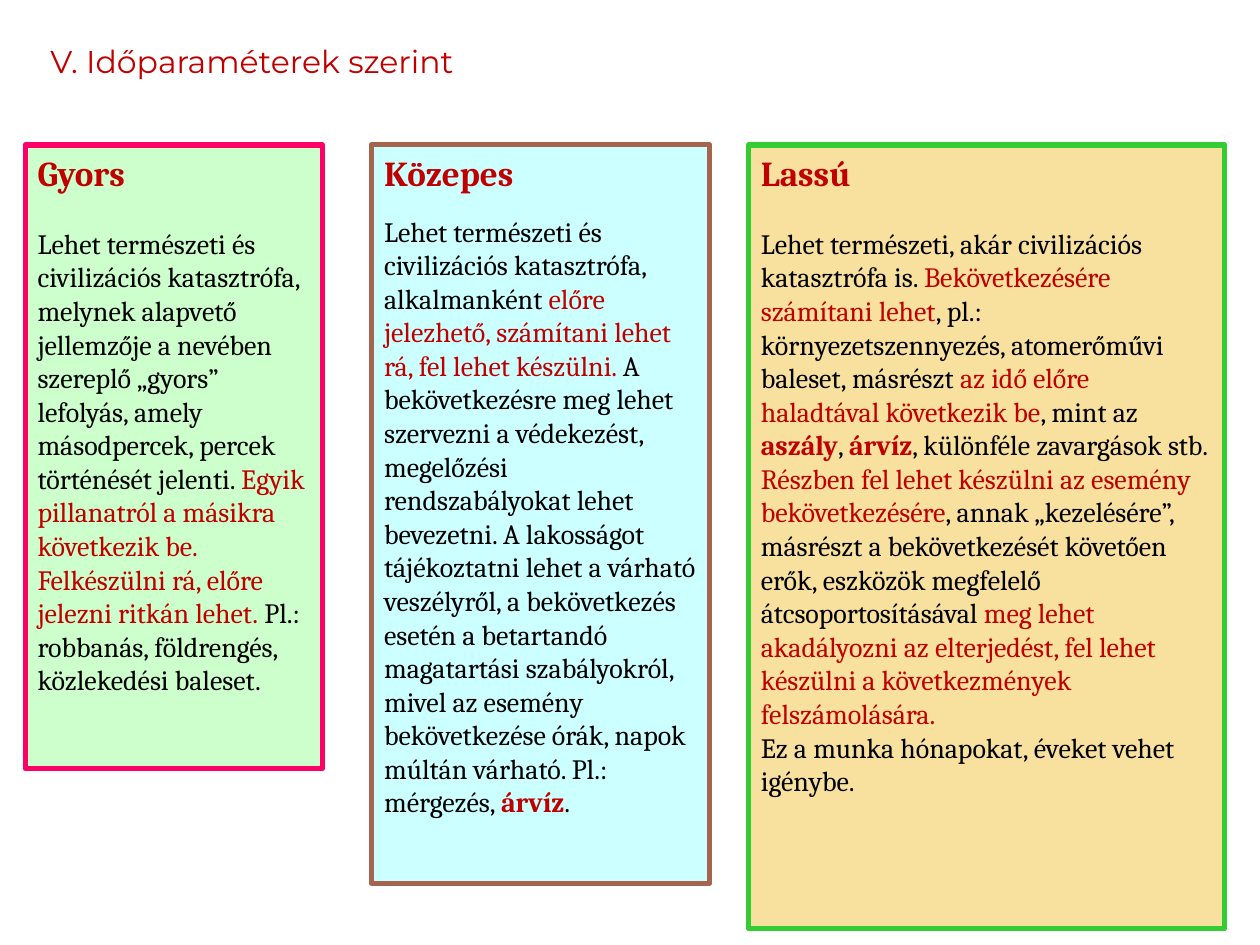
from pptx import Presentation
from pptx.dml.color import RGBColor
from pptx.enum.shapes import MSO_SHAPE
from pptx.enum.text import MSO_ANCHOR, MSO_AUTO_SIZE, PP_ALIGN
from pptx.util import Pt

RECTANGLE = MSO_SHAPE.RECTANGLE
TOP = MSO_ANCHOR.TOP
NO_AUTOFIT = MSO_AUTO_SIZE.NONE
LEFT = PP_ALIGN.LEFT

EMU_PER_PX = 9144
TITLE_ONLY = 5
COLUMN_TOP = 115

COLORS = {
    "red": "C00000",
    "black": "000000",
    "green": "CCFFCC",
    "pink": "FF0066",
    "cyan": "CCFFFF",
    "brown": "A5644E",
    "sand": "F8E19F",
    "lime": "33CC33",
}

PLAIN = {"color": "black"}
RED = {"color": "red"}
BOLD = {"color": "red", "bold": True}

COLUMNS = [
    {
        "heading": "Gyors", "left": 20, "width": 236, "height": 495,
        "fill": "green", "line": "pink", "gap": 19,
        "body": [[
            ("Lehet természeti és civilizációs katasztrófa, melynek alapvető jellemzője "
             "a nevében szereplő „gyors” lefolyás, amely másodpercek, percek "
             "történését jelenti. ", PLAIN),
            ("Egyik pillanatról a másikra következik be. Felkészülni rá, előre "
             "jelezni ritkán lehet.", RED),
            (" Pl.: robbanás, földrengés, közlekedési baleset.", PLAIN),
        ]],
    },
    {
        "heading": "Közepes", "left": 295, "width": 268, "height": 586,
        "fill": "cyan", "line": "brown", "gap": 12,
        "body": [[
            ("Lehet természeti és civilizációs katasztrófa, alkalmanként ", PLAIN),
            ("előre jelezhető, számítani lehet rá, fel lehet készülni. ", RED),
            ("A bekövetkezésre meg lehet szervezni a védekezést, megelőzési "
             "rendszabályokat lehet bevezetni. A lakosságot tájékoztatni lehet a "
             "várható veszélyről, a bekövetkezés esetén a betartandó magatartási "
             "szabályokról, mivel az esemény bekövetkezése órák, napok múltán "
             "várható. Pl.: mérgezés, ", PLAIN),
            ("árvíz", BOLD),
            (".", PLAIN),
        ]],
    },
    {
        "heading": "Lassú", "left": 594, "width": 378, "height": 622,
        "fill": "sand", "line": "lime", "gap": 19,
        "body": [
            [
                ("Lehet természeti, akár civilizációs katasztrófa is. ", PLAIN),
                ("Bekövetkezésére számítani lehet", RED),
                (", pl.: környezetszennyezés, atomerőművi baleset, másrészt ", PLAIN),
                ("az idő előre haladtával következik be", RED),
                (", mint az ", PLAIN),
                ("aszály", BOLD),
                (", ", PLAIN),
                ("árvíz", BOLD),
                (", különféle zavargások stb.", PLAIN),
            ],
            [
                ("Részben fel lehet készülni az esemény bekövetkezésére", RED),
                (", annak „kezelésére”, másrészt a bekövetkezését követően erők, "
                 "eszközök megfelelő átcsoportosításával ", PLAIN),
                ("meg lehet akadályozni az elterjedést, fel lehet készülni a "
                 "következmények felszámolására.", RED),
            ],
            [("Ez a munka hónapokat, éveket vehet igénybe.", PLAIN)],
        ],
    },
]


def px(length):
    return length * EMU_PER_PX


def rgb(name):
    return RGBColor.from_string(COLORS[name])


def add_text(paragraph, text, font="Cambria", size=16, color="black", bold=False):
    run = paragraph.add_run()
    run.text = text
    run.font.name = font
    run.font.size = Pt(size)
    run.font.bold = bold
    run.font.color.rgb = rgb(color)


def prepare_frame(shape, wrap):
    frame = shape.text_frame
    frame.word_wrap = wrap
    frame.auto_size = NO_AUTOFIT
    frame.vertical_anchor = TOP
    frame.paragraphs[0].alignment = LEFT
    return frame


def set_title(slide, text):
    title = slide.shapes.title
    title.left, title.top, title.width, title.height = map(px, (30, 28, 377, 40))
    frame = prepare_frame(title, wrap=False)
    add_text(frame.paragraphs[0], text, font="Montserrat", size=18, color="red")


def add_column(slide, column):
    shape = slide.shapes.add_shape(
        RECTANGLE, px(column["left"]), px(COLUMN_TOP),
        px(column["width"]), px(column["height"]))
    shape.shadow.inherit = False
    shape.fill.solid()
    shape.fill.fore_color.rgb = rgb(column["fill"])
    shape.line.color.rgb = rgb(column["line"])
    shape.line.width = Pt(3)

    frame = prepare_frame(shape, wrap=True)
    heading = frame.paragraphs[0]
    heading.space_after = Pt(column["gap"])
    add_text(heading, column["heading"], size=20, color="red", bold=True)
    for runs in column["body"]:
        paragraph = frame.add_paragraph()
        paragraph.alignment = LEFT
        for text, style in runs:
            add_text(paragraph, text, **style)


def main():
    presentation = Presentation()
    presentation.slide_width = px(1000)
    presentation.slide_height = px(750)
    slide = presentation.slides.add_slide(presentation.slide_layouts[TITLE_ONLY])
    set_title(slide, "V. Időparaméterek szerint")
    for column in COLUMNS:
        add_column(slide, column)
    presentation.save("out.pptx")


if __name__ == "__main__":
    main()
